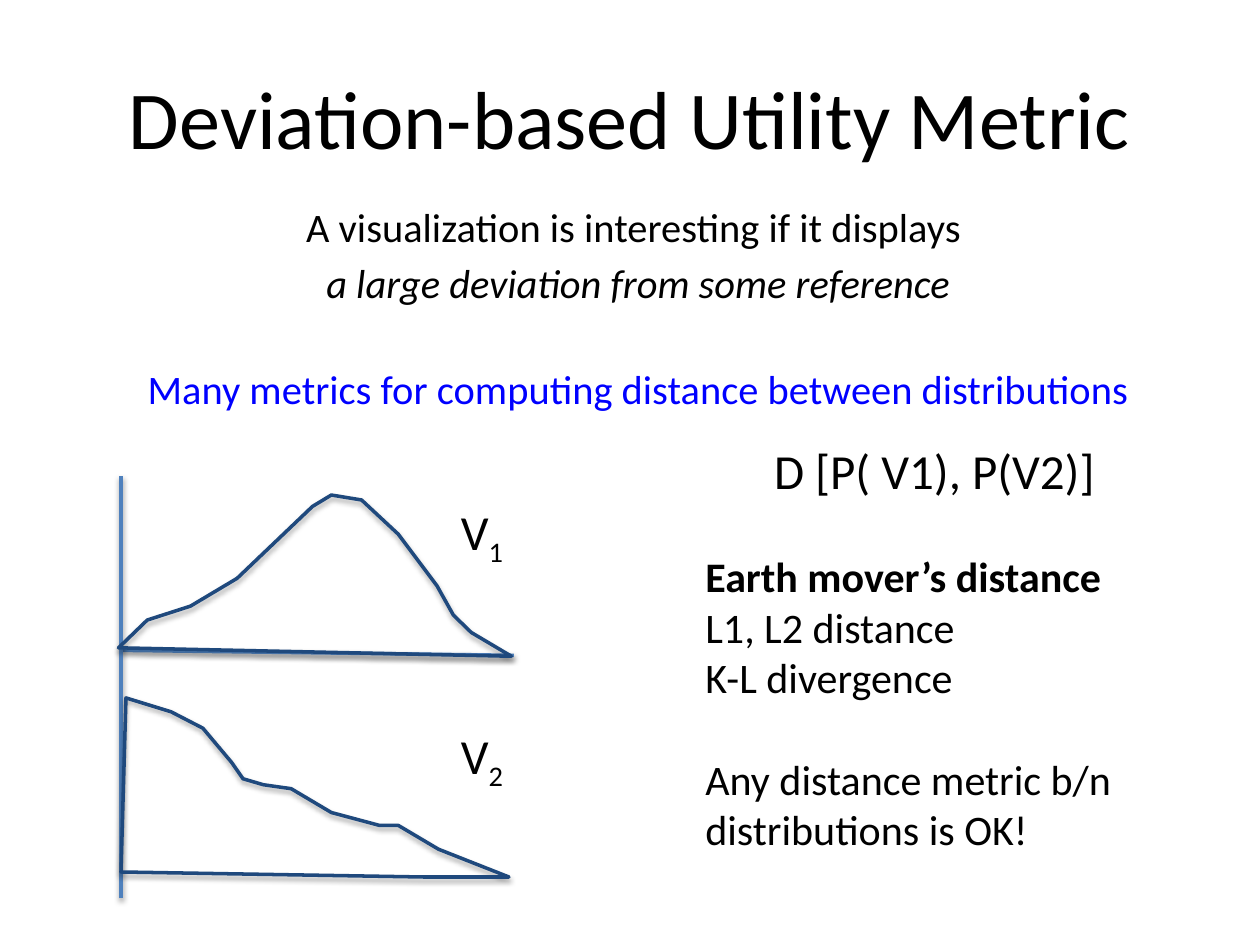
import dataclasses
import typing

import lxml.etree
import pptx
import pptx.dml.color
import pptx.enum.shapes
import pptx.enum.text
import pptx.oxml.ns
import pptx.util

Cm = pptx.util.Cm
Pt = pptx.util.Pt
Rgb = pptx.dml.color.RGBColor
qn = pptx.oxml.ns.qn
Align = pptx.enum.text.PP_ALIGN
Anchor = pptx.enum.text.MSO_ANCHOR
Point = tuple[float, float]


@dataclasses.dataclass(frozen=True)
class Theme:
    font: str = "Calibri"
    ink: str = "000000"
    accent: str = "0000FF"
    axis: str = "4F81BD"
    curve: str = "1F497D"
    title: float = 47
    lead: float = 23.1
    label: float = 28
    body: float = 24
    line: float = 2
    blur: float = 3.1


THEME = Theme()


@dataclasses.dataclass(frozen=True)
class Axis:
    start: Point
    end: Point


@dataclasses.dataclass(frozen=True)
class Curve:
    points: list[Point]


@dataclasses.dataclass(frozen=True)
class Label:
    sub: str
    top: float


AXES = [
    Axis((2.44, 13.11), (10.36, 13.21)),
    Axis((2.44, 18.11), (2.44, 9.6)),
]
CURVES = [
    Curve([(2.44, 17.58), (2.54, 14.07), (3.45, 14.35), (4.09, 14.68),
           (4.67, 15.37), (4.9, 15.7), (5.31, 15.82), (5.87, 15.9),
           (6.68, 16.38), (7.65, 16.64), (8.03, 16.64), (8.84, 17.12),
           (10.26, 17.68), (8.53, 17.68)]),
    Curve([(2.39, 13.06), (10.31, 13.23), (9.5, 12.75), (9.14, 12.4),
           (8.81, 11.81), (8.03, 10.77), (7.29, 10.08), (6.68, 9.98),
           (6.3, 10.21), (4.78, 11.66), (3.84, 12.22), (2.97, 12.5)]),
]
LABELS = [Label("1", 9.98), Label("2", 14.5)]


def add_box(slide, left: float, top: float, width: float, height: float,
            anchor=Anchor.TOP):
    box = slide.shapes.add_textbox(Cm(left), Cm(top), Cm(width), Cm(height))
    box.text_frame.word_wrap = True
    box.text_frame.vertical_anchor = anchor
    return box.text_frame


def add_text(frame, text: str, *, size: float, color: str = THEME.ink,
             bold: bool = False, italic: bool = False, align=Align.LEFT,
             before: float = 0, sub: str = "") -> None:
    para = frame.paragraphs[0]
    if para.runs:
        para = frame.add_paragraph()
    para.alignment = align
    para.space_before = Pt(before)
    for part in filter(None, (text, sub)):
        run = para.add_run()
        run.text = part
        font = run.font
        font.name, font.size = THEME.font, Pt(size)
        font.bold, font.italic = bold, italic
        font.color.rgb = Rgb.from_string(color)
    if sub:
        run._r.get_or_add_rPr().set("baseline", "-25000")


def style_line(shape, color: str, drop: float, alpha: int) -> None:
    shape.line.color.rgb = Rgb.from_string(color)
    shape.line.width = Pt(THEME.line)
    # Soft shadow straight below the line
    effects = lxml.etree.SubElement(shape._element.spPr, qn("a:effectLst"))
    shadow = lxml.etree.SubElement(
        effects, qn("a:outerShdw"), blurRad=str(Pt(THEME.blur)),
        dist=str(Pt(drop)), dir="5400000", rotWithShape="0")
    tint = lxml.etree.SubElement(shadow, qn("a:srgbClr"), val=THEME.ink)
    lxml.etree.SubElement(tint, qn("a:alpha"), val=str(alpha * 1000))


def draw_axis(slide, axis: Axis) -> None:
    ends: typing.Iterable = (Cm(n) for n in axis.start + axis.end)
    line = slide.shapes.add_connector(
        pptx.enum.shapes.MSO_CONNECTOR.STRAIGHT, *ends)
    style_line(line, THEME.axis, 1.6, 38)


def draw_curve(slide, curve: Curve) -> None:
    first, *rest = [(Cm(x), Cm(y)) for x, y in curve.points]
    pen = slide.shapes.build_freeform(*first)
    pen.add_line_segments(rest, close=True)
    shape = pen.convert_to_shape()
    shape.fill.background()
    style_line(shape, THEME.curve, 1.8, 35)


def draw_label(slide, label: Label) -> None:
    frame = add_box(slide, 9.04, label.top, 1.6, 1.45)
    add_text(frame, "V", size=THEME.label, sub=label.sub)


def main() -> None:
    deck = pptx.Presentation()
    deck.slide_width, deck.slide_height = Cm(25.4), Cm(19.05)
    slide = deck.slides.add_slide(deck.slide_layouts[6])

    # Title
    frame = add_box(slide, 1.27, 0.76, 22.86, 3.18, Anchor.MIDDLE)
    add_text(frame, "Deviation-based Utility Metric", size=THEME.title,
             align=Align.CENTER)

    # Lead statement
    frame = add_box(slide, 2.03, 3.94, 21.69, 4.22)
    lead = {"size": THEME.lead, "align": Align.CENTER}
    add_text(frame, "A visualization is interesting if it displays ",
             before=4.6, **lead)
    add_text(frame, "a large deviation from some reference",
             italic=True, before=4.6, **lead)
    add_text(frame,
             "Many metrics for computing distance between distributions",
             color=THEME.accent, before=32.8, **lead)

    # Two distributions
    for axis in AXES:
        draw_axis(slide, axis)
    for curve in CURVES:
        draw_curve(slide, curve)
    for label in LABELS:
        draw_label(slide, label)

    # Distance metrics
    frame = add_box(slide, 13.97, 8.76, 9.73, 10.19)
    add_text(frame, "D [P( V1), P(V2)]", size=THEME.label,
             align=Align.CENTER)
    add_text(frame, "Earth mover’s distance", size=THEME.body, bold=True,
             before=29.3)
    add_text(frame, "L1, L2 distance", size=THEME.body)
    add_text(frame, "K-L divergence", size=THEME.body)
    add_text(frame, "Any distance metric b/n distributions is OK!",
             size=THEME.body, before=29.3)

    deck.save("out.pptx")


if __name__ == "__main__":
    main()
